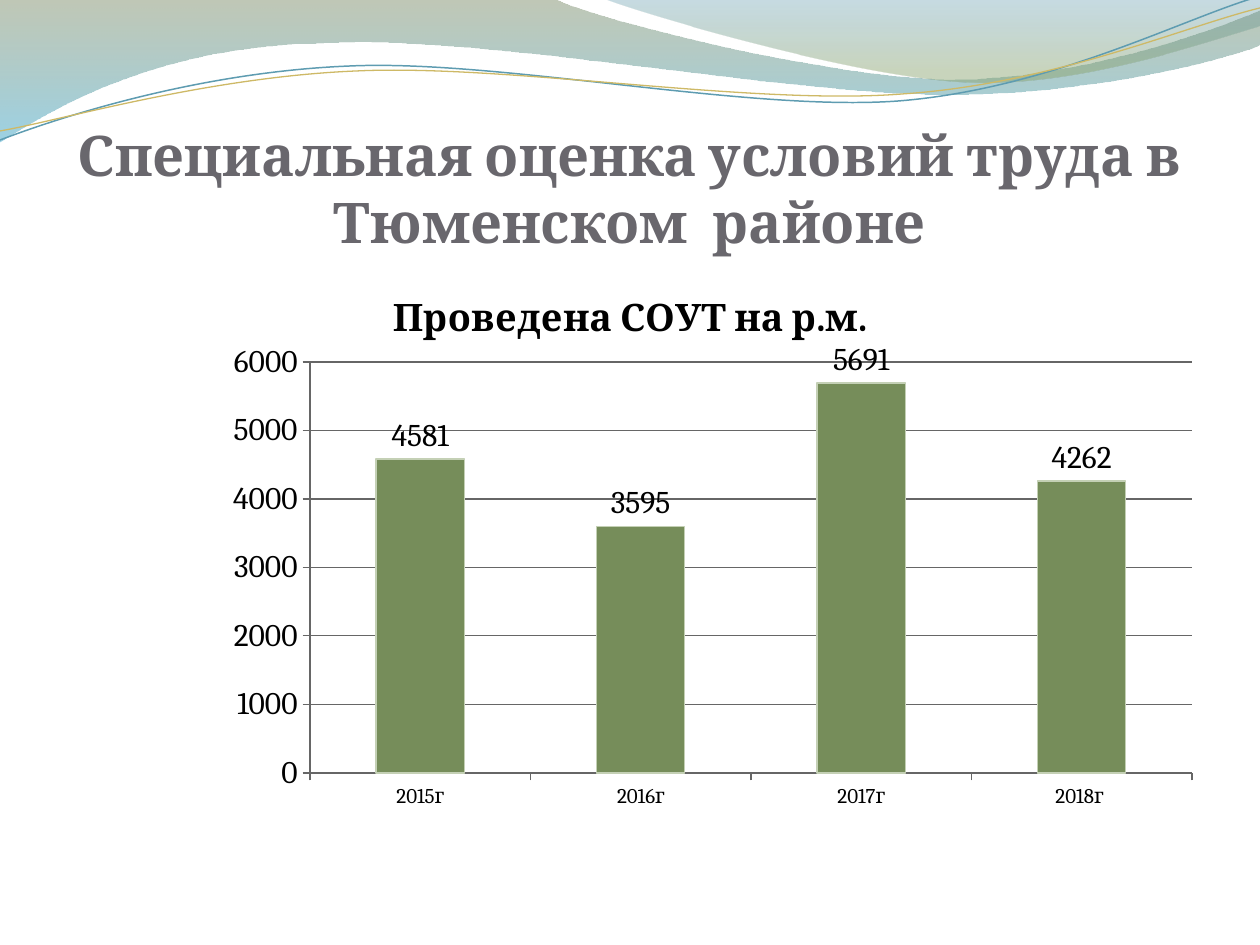
from lxml.etree import SubElement
from pptx import Presentation
from pptx.chart.data import CategoryChartData
from pptx.dml.color import RGBColor
from pptx.enum.chart import XL_CHART_TYPE, XL_LABEL_POSITION, XL_TICK_MARK
from pptx.enum.text import MSO_ANCHOR, MSO_AUTO_SIZE, PP_ALIGN
from pptx.oxml.ns import qn
from pptx.util import Pt

PX = 914400 / 126
FONT = "Cambria"
COLORS = {
    "title": "69676D", "text": "000000", "axis": "666666",
    "bar": "768D5A", "bar_edge": "C4D0B5",
    "moss": "74855E", "sky": "4AACCE", "teal": "45889F", "sage": "8AA36D",
    "blue_thread": "5E9CB1", "gold_thread": "CEB966",
}
BAND_WAVE = [
    (0, 0), (554, -1), (600, 21, 837, 79, 955, 79), (1075, 79, 1207, 33, 1260, 11),
    (1261, 45), (1239, 55, 1096, 96, 940, 94), (784, 94, 481, 35, 324, 43),
    (163, 45, 58, 105, -1, 142), (0, 0),
]
CORNER_WAVE = [
    (604, -1), (641, 14, 859, 78, 969, 82), (1079, 87, 1211, 40, 1260, 26),
    (1260, 0), (604, -1),
]
BLUE_THREAD = [
    (0, 140), (60, 117, 199, 72, 349, 66), (498, 59, 747, 112, 898, 101),
    (1050, 89, 1182, 19, 1257, -3),
]
GOLD_THREAD = [
    (0, 131), (59, 121, 207, 77, 357, 71), (508, 64, 752, 106, 903, 94),
    (1053, 84, 1186, 26, 1260, 8),
]
HEADING = "Специальная оценка условий труда в Тюменском  районе"
SERIES = "Проведена СОУТ на р.м."
ASSESSED = {"2015г": 4581, "2016г": 3595, "2017г": 5691, "2018г ": 4262}
CHART_BOX = (63, 267, 1134, 605)
PLOT_BOX = (247, 95, 882, 411)


def px(length):
    """Turn whole pixels into EMU."""
    return round(length * PX)


def rgb(name):
    """Look up a named colour."""
    return RGBColor.from_string(COLORS[name])


def add_outline(slide, steps, close):
    """Add a shadowless freeform of straight and cubic curve steps."""
    points = [(px(x), px(y)) for step in steps for x, y in zip(step[::2], step[1::2])]
    builder = slide.shapes.build_freeform(*points[0])
    builder.add_line_segments(points[1:], close=close)
    outline = builder.convert_to_shape()
    outline.shadow.inherit = False
    segments = iter(list(outline.element.iter(qn("a:lnTo"))))
    for step in steps[1:]:
        first, *others = [next(segments) for _ in step[::2]]
        if others:
            first.tag = qn("a:cubicBezTo")
        for other in others:
            first.append(other[0])
            other.getparent().remove(other)
    return outline


def add_wave(slide, steps, stops):
    """Add a wave with a translucent top-to-bottom gradient."""
    wave = add_outline(slide, steps, True)
    wave.line.fill.background()
    wave.fill.gradient()
    wave.fill.gradient_angle = 270
    for stop, (position, color, _) in zip(wave.fill.gradient_stops, stops):
        stop.position = position
        stop.color.rgb = rgb(color)
    tints = wave.element.spPr.iter(qn("a:srgbClr"))
    for tint, (_, _, opacity) in zip(tints, stops):
        SubElement(tint, qn("a:alpha")).set("val", str(opacity * 1000))


def add_thread(slide, steps, color, width):
    """Add a thin open curve."""
    thread = add_outline(slide, steps, False)
    thread.fill.background()
    thread.line.color.rgb = rgb(color)
    thread.line.width = Pt(width)


def fill_title(slide):
    """Place and format the heading above the waves."""
    title = slide.shapes.title
    slide.shapes.element.append(title.element)
    title.left, title.top, title.width, title.height = map(px, (63, 97, 1134, 158))
    frame = title.text_frame
    frame.word_wrap = True
    frame.auto_size = MSO_AUTO_SIZE.NONE
    frame.vertical_anchor = MSO_ANCHOR.BOTTOM
    frame.margin_left = frame.margin_right = frame.margin_bottom = 0
    frame.margin_top = px(6)
    paragraph = frame.paragraphs[0]
    paragraph.alignment = PP_ALIGN.CENTER
    run = paragraph.add_run()
    run.text = HEADING
    style_font(run.font, 32, "title", True)


def style_font(font, size, color, bold=False):
    """Set the face, size, colour and weight of a font."""
    font.name = FONT
    font.size = Pt(size)
    font.bold = bold
    font.color.rgb = rgb(color)


def style_axis(axis, size):
    """Give an axis its line, ticks and label size."""
    axis.major_tick_mark = XL_TICK_MARK.OUTSIDE
    axis.minor_tick_mark = XL_TICK_MARK.NONE
    axis.format.line.color.rgb = rgb("axis")
    axis.format.line.width = Pt(0.75)
    style_font(axis.tick_labels.font, size, "text")


def set_plot_area(chart):
    """Fix the inner plot area as fractions of the chart."""
    plot_area = chart.element.chart.plotArea
    for old in plot_area.findall(qn("c:layout")):
        plot_area.remove(old)
    layout = SubElement(plot_area, qn("c:layout"))
    plot_area.insert(0, layout)
    manual = SubElement(layout, qn("c:manualLayout"))
    settings = {"layoutTarget": "inner", "xMode": "edge", "yMode": "edge"}
    for tag, length, whole in zip("xywh", PLOT_BOX, CHART_BOX[2:] * 2):
        settings[tag] = length / whole
    for tag, value in settings.items():
        SubElement(manual, qn(f"c:{tag}")).set("val", str(value))


def add_assessment_chart(slide):
    """Add the column chart of assessed workplaces by year."""
    data = CategoryChartData()
    data.categories = list(ASSESSED)
    data.add_series(SERIES, list(ASSESSED.values()))
    chart = slide.shapes.add_chart(
        XL_CHART_TYPE.COLUMN_CLUSTERED, *map(px, CHART_BOX), data).chart
    style_font(chart.font, 18, "text")
    chart.has_legend = False
    chart.has_title = True
    heading = chart.chart_title.text_frame.paragraphs[0].add_run()
    heading.text = SERIES
    style_font(heading.font, 21.6, "text", True)
    chart.chart_title.include_in_layout = False

    style_axis(chart.category_axis, 12)
    scale = chart.value_axis
    style_axis(scale, 18)
    scale.minimum_scale, scale.maximum_scale, scale.major_unit = 0, 6000, 1000
    scale.major_gridlines.format.line.color.rgb = rgb("axis")
    scale.major_gridlines.format.line.width = Pt(0.75)

    plot = chart.plots[0]
    plot.gap_width = 150
    plot.vary_by_categories = False
    bars = plot.series[0]
    bars.format.fill.solid()
    bars.format.fill.fore_color.rgb = rgb("bar")
    bars.format.line.color.rgb = rgb("bar_edge")
    bars.format.line.width = Pt(0.75)
    labels = bars.data_labels
    labels.show_value = True
    labels.position = XL_LABEL_POSITION.OUTSIDE_END
    style_font(labels.font, 18, "text")
    set_plot_area(chart)


def main():
    """Build and save the slide."""
    deck = Presentation()
    deck.slide_width, deck.slide_height = px(1260), px(945)
    slide = deck.slides.add_slide(deck.slide_layouts[5])
    add_wave(slide, BAND_WAVE, [(0, "moss", 45), (1, "sky", 55)])
    add_wave(slide, CORNER_WAVE, [(0, "teal", 30), (0.8, "sage", 45)])
    add_thread(slide, BLUE_THREAD, "blue_thread", 0.85)
    add_thread(slide, GOLD_THREAD, "gold_thread", 0.75)
    fill_title(slide)
    add_assessment_chart(slide)
    deck.save("out.pptx")


if __name__ == "__main__":
    main()
